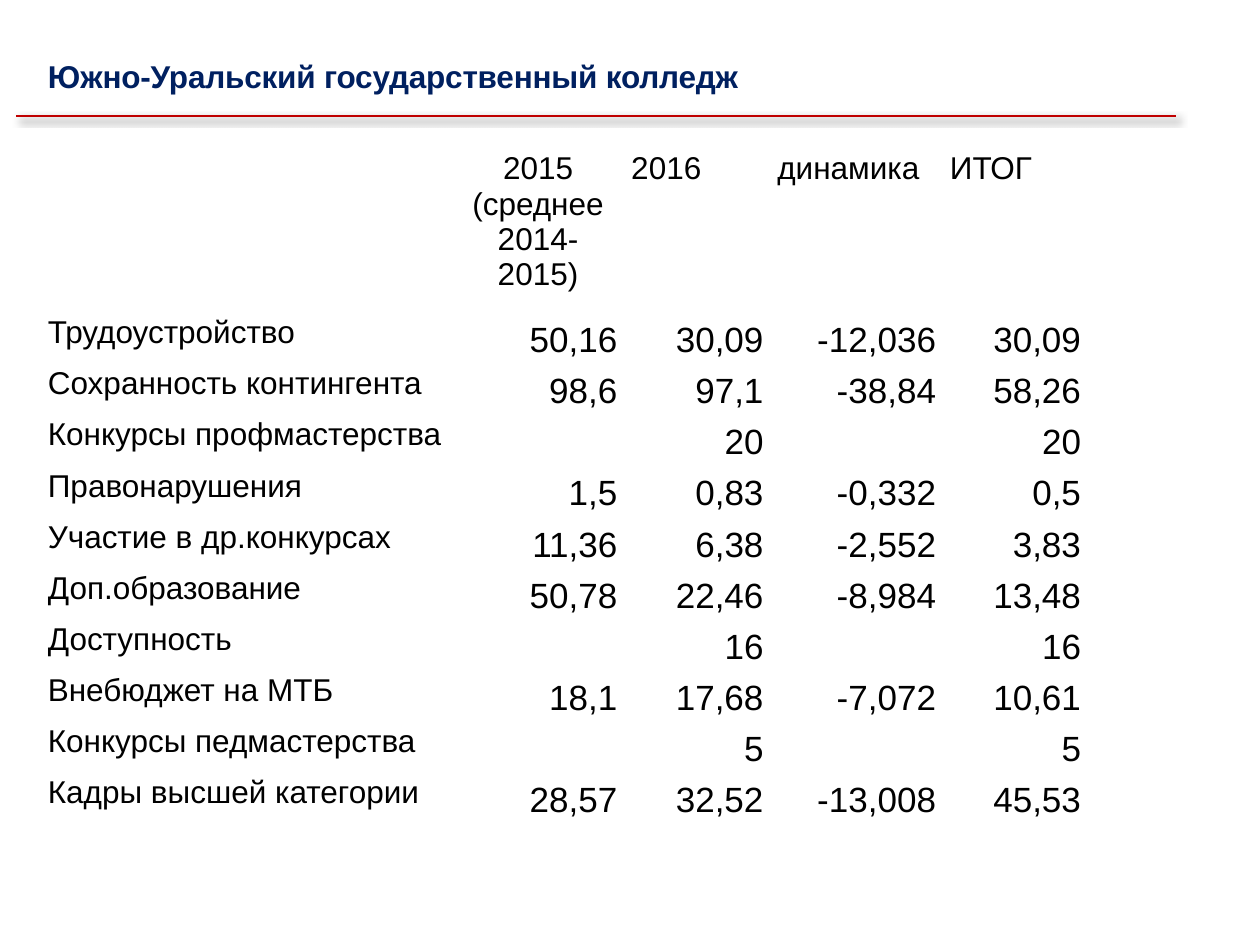
import pptx
import pptx.util
import pptx.dml.color
import pptx.enum.shapes
import pptx.enum.text
import pptx.oxml
import pptx.oxml.ns

Inches, Pt = pptx.util.Inches, pptx.util.Pt
RGB = pptx.dml.color.RGBColor.from_string
ALIGN = pptx.enum.text.PP_ALIGN
ANCHOR = pptx.enum.text.MSO_ANCHOR

TITLE = "Южно-Уральский государственный колледж"
HEADER = ("", "2015 (среднее 2014-2015)", "2016", "динамика", "ИТОГ")
ROWS = [
    ("Трудоустройство", "50,16", "30,09", "-12,036", "30,09"),
    ("Сохранность контингента", "98,6", "97,1", "-38,84", "58,26"),
    ("Конкурсы профмастерства", "", "20", "", "20"),
    ("Правонарушения", "1,5", "0,83", "-0,332", "0,5"),
    ("Участие в др.конкурсах", "11,36", "6,38", "-2,552", "3,83"),
    ("Доп.образование", "50,78", "22,46", "-8,984", "13,48"),
    ("Доступность", "", "16", "", "16"),
    ("Внебюджет на МТБ", "18,1", "17,68", "-7,072", "10,61"),
    ("Конкурсы педмастерства", "", "5", "", "5"),
    ("Кадры высшей категории", "28,57", "32,52", "-13,008", "45,53"),
]
COLUMNS = (3.35, 1.28, 1.16, 1.37, 1.15)
HEADER_H, ROW_H = 1.3, 0.406
LEFT, TABLE_TOP = 0.28, 1.15
THEME = dict(font="Arial", title="002060", text="000000", rule="C00000",
             label_size=18, value_size=20)
SHADOW = (
    f'<a:effectLst {pptx.oxml.ns.nsdecls("a")}>'
    '<a:outerShdw blurRad="50800" dist="38100" dir="2700000" algn="tl" rotWithShape="0">'
    '<a:srgbClr val="000000"><a:alpha val="40000"/></a:srgbClr>'
    '</a:outerShdw></a:effectLst>'
)


def add_run(p, text, size, color, bold=False):
    r = p.add_run()
    r.text = text
    r.font.name = THEME["font"]
    r.font.size = Pt(size)
    r.font.bold = bold
    r.font.color.rgb = RGB(color)
    return r


def add_title(s):
    sp = s.shapes.title
    sp.left, sp.top, sp.width, sp.height = map(Inches, (LEFT, 0.4, 5.93, 0.4))
    tf = sp.text_frame
    tf.word_wrap = False
    tf.auto_size = pptx.enum.text.MSO_AUTO_SIZE.SHAPE_TO_FIT_TEXT
    tf.vertical_anchor = ANCHOR.TOP
    p = tf.paragraphs[0]
    p.alignment = ALIGN.LEFT
    r = add_run(p, TITLE, THEME["label_size"], THEME["title"], True)
    r.font._element.set("spc", "-10")


def add_rule(s):
    line = s.shapes.add_connector(
        pptx.enum.shapes.MSO_CONNECTOR.STRAIGHT,
        Inches(0.13), Inches(0.92), Inches(9.33), Inches(0.92))
    line.line.color.rgb = RGB(THEME["rule"])
    line.line.width = Pt(1.5)
    line._element.spPr.append(pptx.oxml.parse_xml(SHADOW))


def fill_cell(cell, text, is_value, alignment):
    cell.fill.background()
    if is_value:
        cell.vertical_anchor = ANCHOR.BOTTOM
        cell.margin_left = cell.margin_right = cell.margin_top = Inches(0.01)
        cell.margin_bottom = 0
    p = cell.text_frame.paragraphs[0]
    p.alignment = alignment
    size = THEME["value_size" if is_value else "label_size"]
    if text:
        add_run(p, text, size, THEME["text"])
    else:
        p.font.size = Pt(size)


def add_results(s):
    heights = [HEADER_H] + [ROW_H] * len(ROWS)
    table = s.shapes.add_table(
        len(heights), len(COLUMNS), Inches(LEFT), Inches(TABLE_TOP),
        Inches(sum(COLUMNS)), Inches(sum(heights))).table
    table.first_row = table.horz_banding = False
    for column, width in zip(table.columns, COLUMNS):
        column.width = Inches(width)
    for row, height in zip(table.rows, heights):
        row.height = Inches(height)
    for i, texts in enumerate([HEADER] + ROWS):
        for j, text in enumerate(texts):
            is_value = i > 0 and j > 0
            alignment = ALIGN.RIGHT if is_value else ALIGN.LEFT
            if (i, j) == (0, 1):
                alignment = ALIGN.CENTER
            fill_cell(table.cell(i, j), text, is_value, alignment)


def main():
    prs = pptx.Presentation()
    prs.slide_width, prs.slide_height = Inches(10), Inches(7.5)
    s = prs.slides.add_slide(prs.slide_layouts[5])
    add_rule(s)
    add_title(s)
    add_results(s)
    prs.save("out.pptx")


if __name__ == "__main__":
    main()
